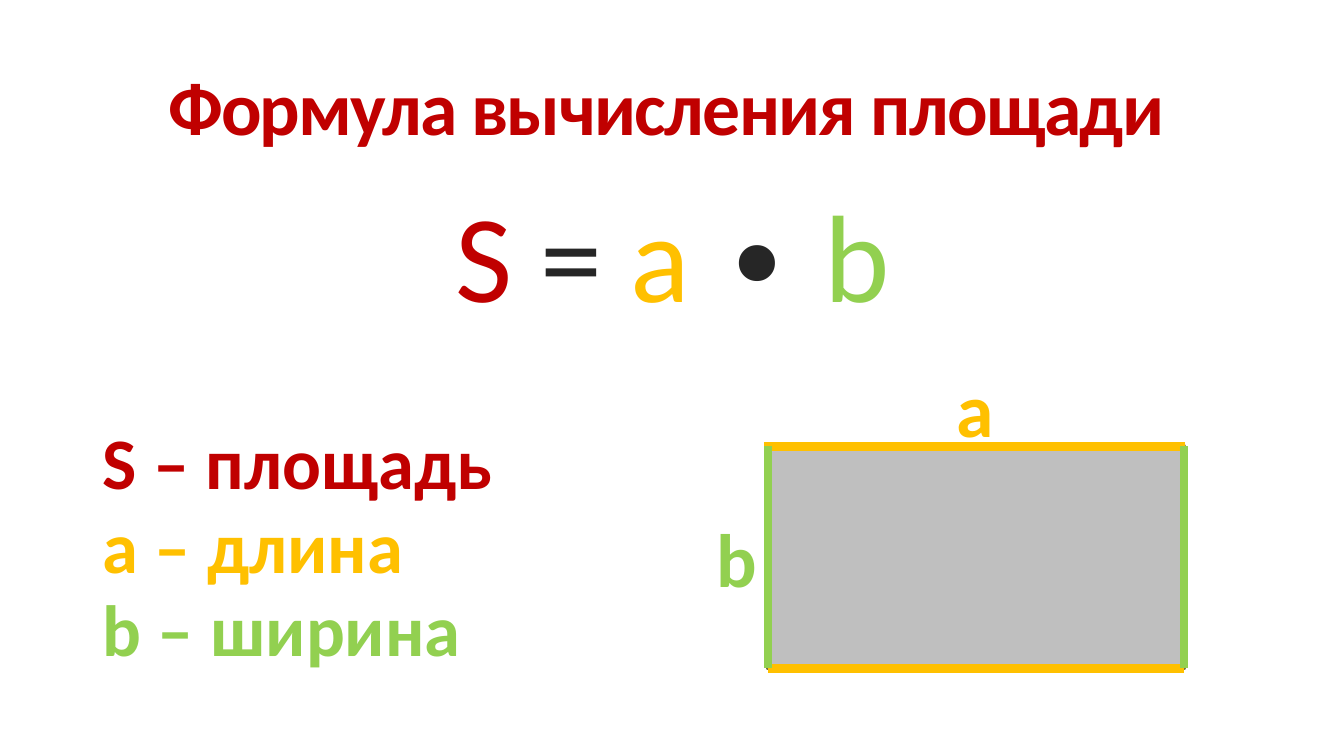
from lxml.etree import SubElement
from pptx import Presentation
from pptx.dml.color import RGBColor
from pptx.enum.shapes import MSO_CONNECTOR, MSO_SHAPE
from pptx.enum.text import MSO_ANCHOR, MSO_AUTO_SIZE, PP_ALIGN
from pptx.oxml.ns import qn
from pptx.util import Cm, Pt

COLORS = {"area": "C00000", "length": "FFC000", "width": "92D050",
          "ink": "262626", "fill": "BFBFBF", "edge": "736C40"}


class FormulaPage:
    """Holds the style and the current slide."""
    font = "Calibri"

    def __init__(self, deck):
        self.page = deck.slides.add_slide(deck.slide_layouts[5])

    def color(self, name):
        return RGBColor.from_string(COLORS[name])

    def span(self, para, text, size, color, bold=True):
        run = para.add_run()
        run.text = text
        run.font.name, run.font.size, run.font.bold = self.font, Pt(size), bold
        run.font.color.rgb = self.color(color)
        return run

    def title(self, text, left, top, width, height):
        box = self.page.shapes.title
        box.left, box.top, box.width, box.height = map(Cm, (left, top, width, height))
        frame = box.text_frame
        frame.word_wrap, frame.auto_size = True, MSO_AUTO_SIZE.NONE
        frame.vertical_anchor = MSO_ANCHOR.MIDDLE
        para = frame.paragraphs[0]
        para.alignment, para.line_spacing = PP_ALIGN.CENTER, 0.85
        run = self.span(para, text, 54, "area")
        run.font._element.set("spc", "-120")

    def text(self, left, top, width, height):
        box = self.page.shapes.add_textbox(*map(Cm, (left, top, width, height)))
        box.text_frame.word_wrap = True
        return box.text_frame

    def paragraph(self, frame, spans, size, before=13, bold=True, align=PP_ALIGN.LEFT):
        para = frame.paragraphs[0]
        if para.runs:
            para = frame.add_paragraph()
        para.alignment, para.line_spacing, para.space_before = align, 0.75, Pt(before)
        for text, color in spans:
            self.span(para, text, size, color, bold)

    def label(self, text, color, left, top, width, height):
        frame = self.text(left, top, width, height)
        frame.word_wrap, frame.auto_size = False, MSO_AUTO_SIZE.SHAPE_TO_FIT_TEXT
        self.span(frame.paragraphs[0], text, 54, color)

    def rectangle(self, left, top, width, height):
        box = self.page.shapes.add_shape(
            MSO_SHAPE.RECTANGLE, *map(Cm, (left, top, width, height)))
        box.shadow.inherit = False
        box.fill.solid()
        box.fill.fore_color.rgb = self.color("fill")
        box.line.color.rgb, box.line.width = self.color("edge"), Pt(3)

    def side(self, color, *ends):
        line = self.page.shapes.add_connector(MSO_CONNECTOR.STRAIGHT, *map(Cm, ends))
        line.line.color.rgb, line.line.width = self.color(color), Pt(6)
        SubElement(line._element.spPr, qn("a:effectLst"))


def main():
    deck = Presentation()
    deck.slide_width, deck.slide_height = Cm(33.87), Cm(19.05)
    page = FormulaPage(deck)
    page.title("Формула вычисления площади", 1.83, 1.4, 29.92, 2.84)

    # Formula and legend
    body = page.text(2.34, 5.23, 29.21, 13.03)
    page.paragraph(body, [("S", "area"), (" = ", "ink"), ("a", "length"),
                          (" ∙ ", "ink"), ("b", "width")],
                   88.8, bold=False, align=PP_ALIGN.CENTER)
    for text, color, before in (("S – площадь", "area", 81),
                                ("a – длина", "length", 13),
                                ("b – ширина", "width", 13)):
        page.paragraph(body, [(text, color)], 51.8, before)

    # Rectangle with coloured sides
    left, top, width, height = 19.35, 11.25, 10.49, 5.59
    right, bottom = left + width, top + height
    page.rectangle(left, top, width, height)
    page.side("length", left - 0.1, top, right + 0.03, top)
    page.side("length", left, bottom, right, bottom)
    for x in (right, left):
        page.side("width", x, top, x, bottom)

    # Side labels
    page.label("a", "length", 23.85, 8.99, 1.42, 2.57)
    page.label("b", "width", 17.81, 12.78, 1.52, 2.57)
    deck.save("out.pptx")


if __name__ == "__main__":
    main()
